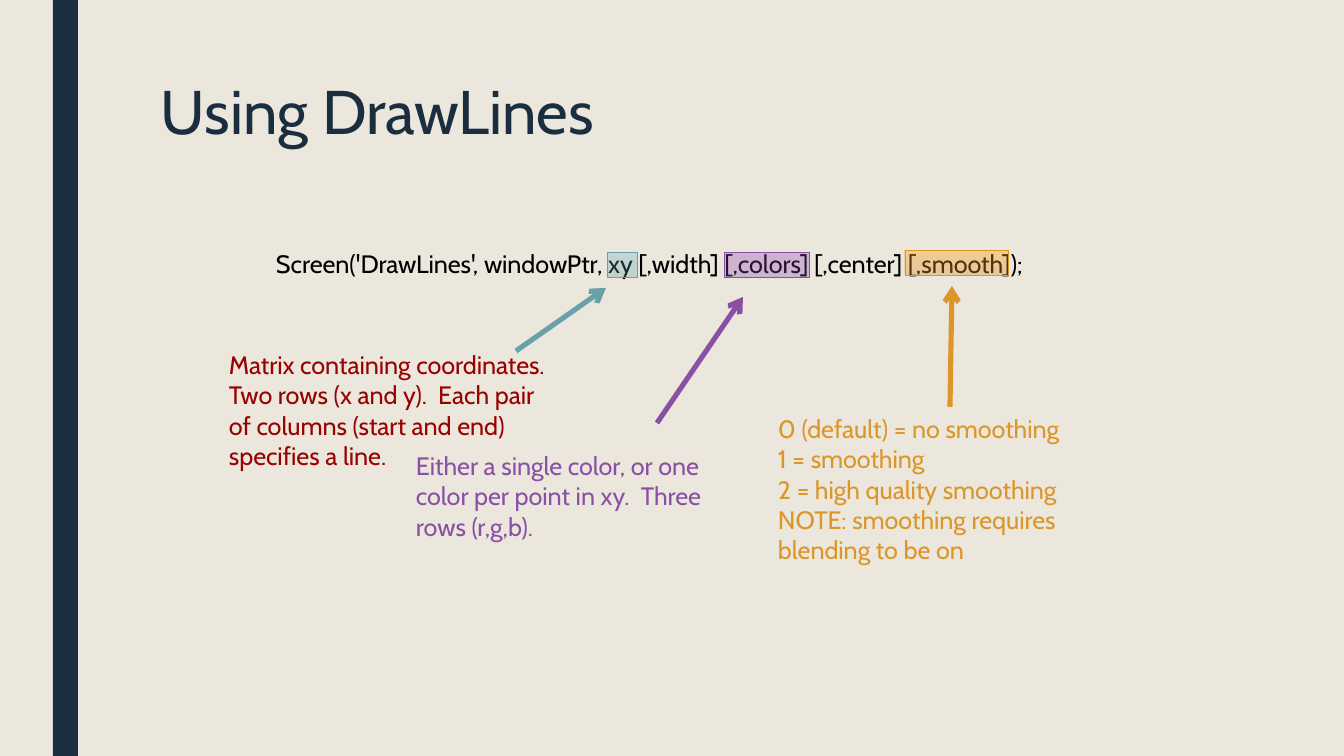
from lxml import etree
from pptx import Presentation
from pptx import util as u
from pptx.dml.color import RGBColor
from pptx.enum import shapes, text
from pptx.oxml.ns import qn

SCALE = 914400 / 134.4
NAVY, TEAL, PLUM, GOLD = "1A2E40", "69A1AB", "8950A6", "DC9528"

ARGS = [
    dict(mark=(608, 252, 30), stops=("5A98A3", "58ACBB"), alpha=27, tone=TEAL,
         ends=(516, 351, 606, 288), note=(216, 343, 352, 136), ink="990000",
         words="Matrix containing coordinates. Two rows (x and y).  "
               "Each pair of columns (start and end) specifies a line."),
    dict(mark=(725, 252, 85), stops=("8146A3", "903BBC"), alpha=29, tone=PLUM,
         ends=(657, 423, 743, 297), note=(403, 444, 352, 105), ink=PLUM,
         words="Either a single color, or one color per point in xy.  Three rows (r,g,b)."),
    dict(mark=(905, 250, 104), stops=("DD8923", "FF9C05"), alpha=34, tone=GOLD,
         ends=(950, 407, 952, 286), note=(765, 407, 352, 167), ink=GOLD,
         words="0 (default) = no smoothing\n1 = smoothing\n2 = high quality smoothing\n"
               "NOTE: smoothing requires blending to be on"),
]


def px(*nums):
    """Turn px lengths into EMU."""
    return [u.Emu(round(n * SCALE)) for n in nums]


def rgb(code):
    """Turn a hex string into a colour."""
    return RGBColor.from_string(code)


def add_text(slide, words, place, size=13.5, color="000000", inset=13, lead=None, grow=True):
    """Add a wrapped text box, one paragraph for each line of words."""
    frame = slide.shapes.add_textbox(*px(*place)).text_frame
    frame.word_wrap = True
    frame.margin_left, frame.margin_right = px(inset, inset)
    if grow:
        frame.auto_size = text.MSO_AUTO_SIZE.SHAPE_TO_FIT_TEXT
    frame.text = words
    for para in frame.paragraphs:
        if lead:
            para.line_spacing = lead
        for run in para.runs:
            run.font.name = "Cabin"
            run.font.size = u.Pt(size)
            run.font.color.rgb = rgb(color)


def add_rect(slide, place):
    """Add a rectangle without a shadow."""
    rect = slide.shapes.add_shape(shapes.MSO_SHAPE.RECTANGLE, *px(*place))
    rect.shadow.inherit = False
    return rect


def add_bar(slide, place, color):
    """Add a solid bar without an outline."""
    bar = add_rect(slide, place)
    bar.fill.solid()
    bar.fill.fore_color.rgb = rgb(color)
    bar.line.fill.background()


def add_mark(slide, place, stops, alpha, tone):
    """Add a see-through gradient marker over an argument."""
    mark = add_rect(slide, place)
    mark.fill.gradient()
    mark.fill.gradient_angle = 90
    for stop, code, spot in zip(mark.fill.gradient_stops, stops, (0, 1)):
        stop.color.rgb = rgb(code)
        stop.position = spot
    for node in mark.element.spPr.iter(qn("a:srgbClr")):
        etree.SubElement(node, qn("a:alpha")).set("val", str(alpha * 1000))
    mark.line.color.rgb = rgb(tone)
    mark.line.width = u.Pt(0.5)


def add_arrow(slide, ends, tone):
    """Add a straight arrow from a note towards its marker."""
    arrow = slide.shapes.add_connector(shapes.MSO_CONNECTOR.STRAIGHT, *px(*ends))
    arrow.line.color.rgb = rgb(tone)
    arrow.line.width = u.Pt(2.75)
    etree.SubElement(arrow.line._get_or_add_ln(), qn("a:tailEnd")).set("type", "arrow")
    etree.SubElement(arrow.element.spPr, qn("a:effectLst"))


def main():
    """Build the slide and save it."""
    deck = Presentation()
    deck.slide_width, deck.slide_height = px(1344, 756)
    slide = deck.slides.add_slide(deck.slide_layouts[6])
    slide.background.fill.solid()
    slide.background.fill.fore_color.rgb = rgb("EBE7DD")
    add_bar(slide, (53, 0, 25, 756), NAVY)
    add_text(slide, "Using DrawLines", (151, 75, 1059, 165), size=33, color=NAVY,
             inset=10, lead=0.89, grow=False)
    add_text(slide, "Screen('DrawLines', windowPtr, xy [,width] [,colors] [,center] [,smooth]);",
             (263, 242, 827, 44))
    for arg in ARGS:
        add_mark(slide, (*arg["mark"], 26), arg["stops"], arg["alpha"], arg["tone"])
        add_arrow(slide, arg["ends"], arg["tone"])
        add_text(slide, arg["words"], arg["note"], color=arg["ink"])
    deck.save("out.pptx")


if __name__ == "__main__":
    main()
